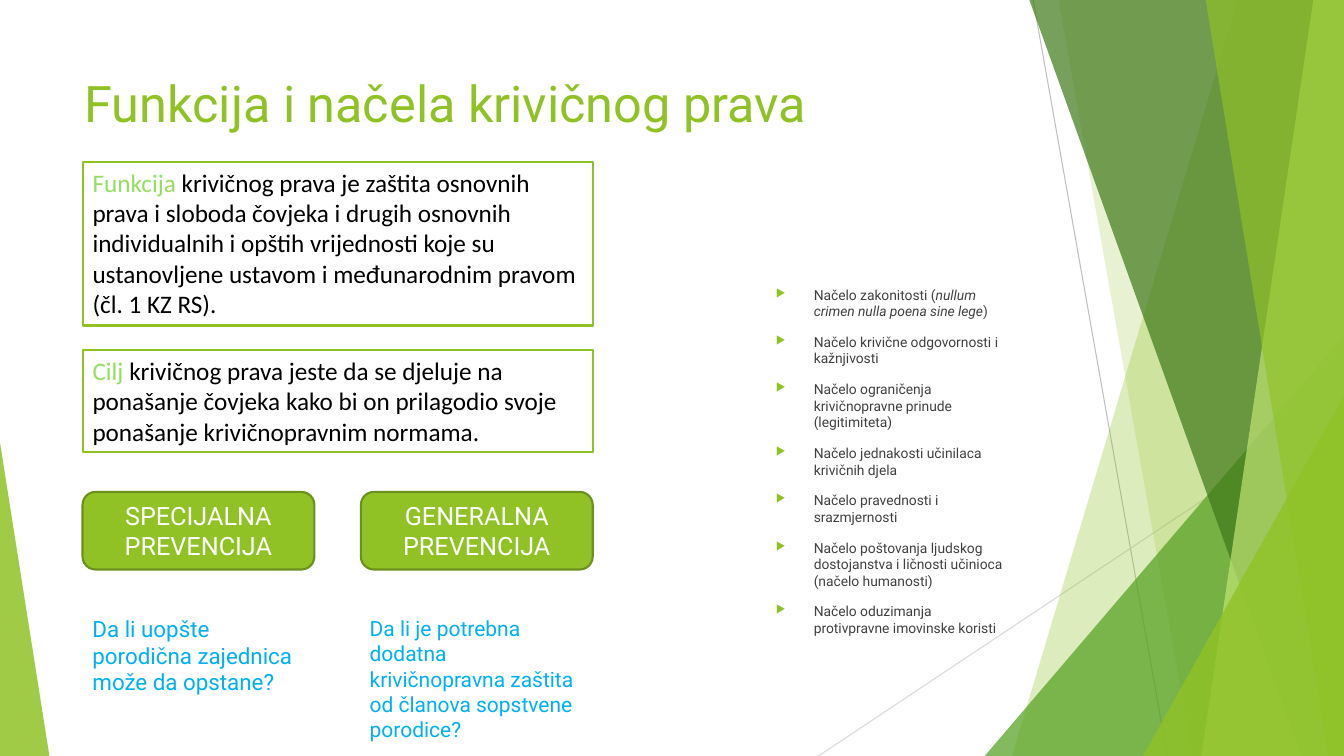
import pptx
import pptx.util
import pptx.dml.color
import pptx.enum.shapes
import pptx.enum.text
import pptx.oxml
import pptx.oxml.ns
import lxml.etree

Pt = pptx.util.Pt
SHAPE = pptx.enum.shapes.MSO_SHAPE
ANCHOR = pptx.enum.text.MSO_ANCHOR
ALIGN = pptx.enum.text.PP_ALIGN
GROW = pptx.enum.text.MSO_AUTO_SIZE.SHAPE_TO_FIT_TEXT
FIXED = pptx.enum.text.MSO_AUTO_SIZE.NONE
qn = pptx.oxml.ns.qn
WIDTH, HEIGHT = 960, 540
GREEN, BLUE = "90C226", "00B0F0"


def paint(fill, colour, opacity=100):
    fill.solid()
    fill.fore_color.rgb = pptx.dml.color.RGBColor.from_string(colour)
    if opacity < 100:
        tint = fill._xPr.find(qn("a:solidFill"))[0]
        lxml.etree.SubElement(tint, qn("a:alpha")).set("val", str(opacity * 1000))


def write(paragraph, pieces, font):
    for words, colour, extra in pieces:
        run = paragraph.add_run()
        run.text = words
        for name, value in {**font, **extra}.items():
            setattr(run.font, name, value)
        paint(run.font.fill, colour)


deck = pptx.Presentation()
deck.slide_width, deck.slide_height = Pt(WIDTH), Pt(HEIGHT)
slide = deck.slides.add_slide(deck.slide_layouts[6])
shapes = slide.shapes

rays = [
    (738, 0, 833.8, HEIGHT, "BFBFBF"),
    (WIDTH, 290.2, 584.6, HEIGHT, "D9D9D9"),
]
for x1, y1, x2, y2, colour in rays:
    ray = shapes.add_connector(
        pptx.enum.shapes.MSO_CONNECTOR.STRAIGHT, Pt(x1), Pt(y1), Pt(x2), Pt(y2))
    paint(ray.line.fill, colour)
    ray.line.width = Pt(0.75)
    lxml.etree.SubElement(ray._element.spPr, qn("a:effectLst"))

facets = [
    ("band", (884.2, 722.9), GREEN, 30),
    ("band", (756, 851.8), GREEN, 20),
    ("triangle", (703.4, 239.8, 256.6, 1), "54A021", 72),
    ("band", (735.1, 929.5), "3F7819", 70),
    ("band", (938.2, 858.2), "C0E474", 70),
    ("band", (861.1, 949), GREEN, 65),
    ("triangle", (816.5, 283, 143.5, 1), GREEN, 80),
    ("triangle", (0, 316.1, 35.3, 0), GREEN, 85),
]
for kind, outline, colour, opacity in facets:
    if kind == "band":
        top_x, bottom_x = outline
        builder = shapes.build_freeform(Pt(top_x), Pt(-0.6))
        builder.add_line_segments([
            (Pt(WIDTH), Pt(-0.6)), (Pt(WIDTH), Pt(HEIGHT)), (Pt(bottom_x), Pt(HEIGHT))])
        facet = builder.convert_to_shape()
    else:
        left, top, width, apex = outline
        facet = shapes.add_shape(
            SHAPE.ISOSCELES_TRIANGLE, Pt(left), Pt(top), Pt(width), Pt(HEIGHT - top))
        facet.adjustments[0] = apex
    paint(facet.fill, colour, opacity)
    facet.line.fill.background()
    facet.shadow.inherit = False

panels = [
    (SHAPE.RECTANGLE, 59, 115.9, 364.5, 116.6, "FFFFFF", GREEN, "Calibri", [
        ("Funkcija", "94DE61", {}),
        (" krivičnog prava je zaštita osnovnih prava i sloboda čovjeka i drugih osnovnih "
         "individualnih i opštih vrijednosti koje su ustanovljene ustavom i "
         "međunarodnim pravom (čl. 1 KZ RS).", "000000", {})]),
    (SHAPE.RECTANGLE, 59, 250.3, 364.5, 72.7, "FFFFFF", GREEN, "Calibri", [
        ("Cilj ", "94DE61", {}),
        ("krivičnog prava jeste da se djeluje na ponašanje čovjeka kako bi on prilagodio "
         "svoje ponašanje krivičnopravnim normama.", "000000", {})]),
    (SHAPE.ROUNDED_RECTANGLE, 59, 351.4, 165.6, 55.4, GREEN, "6B901C", "Roboto", [
        ("SPECIJALNA PREVENCIJA", "FFFFFF", {})]),
    (SHAPE.ROUNDED_RECTANGLE, 257.8, 351.4, 165.6, 55.4, GREEN, "6B901C", "Roboto", [
        ("GENERALNA PREVENCIJA", "FFFFFF", {})]),
]
for preset, left, top, width, height, fill, border, face, pieces in panels:
    panel = shapes.add_shape(preset, Pt(left), Pt(top), Pt(width), Pt(height))
    panel.shadow.inherit = False
    paint(panel.fill, fill)
    paint(panel.line.fill, border)
    panel.line.width = Pt(1.5)
    definition = preset == SHAPE.RECTANGLE
    layout = {
        "word_wrap": True,
        "auto_size": GROW if definition else FIXED,
        "vertical_anchor": ANCHOR.TOP if definition else ANCHOR.MIDDLE,
    }
    for name, value in layout.items():
        setattr(panel.text_frame, name, value)
    paragraph = panel.text_frame.paragraphs[0]
    paragraph.alignment = ALIGN.LEFT if definition else ALIGN.CENTER
    write(paragraph, pieces, {"name": face, "size": Pt(18)})

DARK = "404040"
principles = [
    [("Načelo zakonitosti (", DARK, {}),
     ("nullum crimen nulla poena sine lege", DARK, {"italic": True}),
     (")", DARK, {})],
] + [[(words, DARK, {})] for words in (
    "Načelo krivične odgovornosti i kažnjivosti",
    "Načelo ograničenja krivičnopravne prinude (legitimiteta)",
    "Načelo jednakosti učinilaca krivičnih djela",
    "Načelo pravednosti i srazmjernosti",
    "Načelo poštovanja ljudskog dostojanstva i ličnosti učinioca (načelo humanosti)",
    "Načelo oduzimanja protivpravne imovinske koristi",
)]
texts = [
    (53.3, 48.2, 676.8, 103.7, 36, FIXED, [
        [("Funkcija i načela krivičnog prava", GREEN, {})]]),
    (59, 435.6, 165.6, 65.5, 16, GROW, [
        [("Da li uopšte porodična zajednica može da opstane?", BLUE, {})]]),
    (257, 436.3, 165.6, 97.9, 15, GROW, [
        [("Da li je potrebna dodatna krivičnopravna zaštita od članova sopstvene porodice?",
          BLUE, {})]]),
    (547.2, 200.9, 176.4, 244.1, 9.9, FIXED, principles),
]
for left, top, width, height, size, fit, paragraphs in texts:
    frame = shapes.add_textbox(Pt(left), Pt(top), Pt(width), Pt(height)).text_frame
    frame.word_wrap = True
    frame.auto_size = fit
    for index, pieces in enumerate(paragraphs):
        paragraph = frame.add_paragraph() if index else frame.paragraphs[0]
        write(paragraph, pieces, {"name": "Roboto", "size": Pt(size)})
        if paragraphs is principles:
            paragraph.space_before = Pt(10)
            properties = paragraph._p.get_or_add_pPr()
            properties.set("marL", str(Pt(27)))
            properties.set("indent", str(Pt(-27)))
            bullet_colour = lxml.etree.SubElement(properties, qn("a:buClr"))
            lxml.etree.SubElement(bullet_colour, qn("a:srgbClr")).set("val", GREEN)
            lxml.etree.SubElement(properties, qn("a:buSzPct")).set("val", "80000")
            lxml.etree.SubElement(properties, qn("a:buChar")).set("char", "▶")

deck.save("out.pptx")
